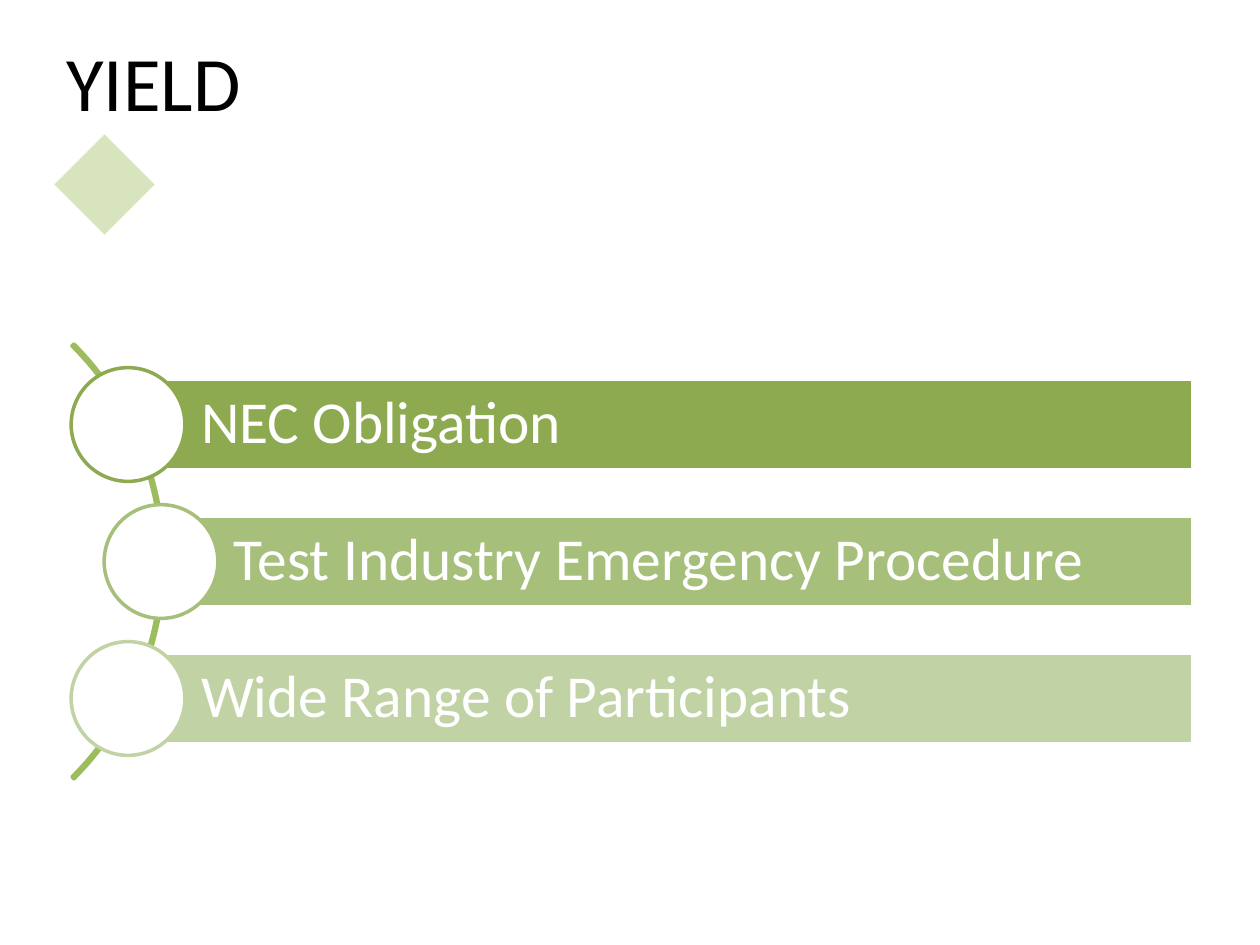
from pptx import Presentation
from pptx import util as u
from pptx.dml.color import RGBColor
from pptx.enum import shapes, text

PX = u.Inches(1) / 126
FONT = "Calibri"


def px(length):
    return u.Emu(round(length * PX))


def color(hex_code):
    return RGBColor.from_string(hex_code)


def add_figure(slide, preset, box, fill=None, line=None):
    figure = slide.shapes.add_shape(preset, *map(px, box))
    figure.shadow.inherit = False
    if fill:
        figure.fill.solid()
        figure.fill.fore_color.rgb = color(fill)
    else:
        figure.fill.background()
    if line:
        figure.line.color.rgb = color(line)
        figure.line.width = u.Pt(2)
    else:
        figure.line.fill.background()
    return figure


def write(frame, wording, size, ink):
    frame.word_wrap = True
    frame.vertical_anchor = text.MSO_ANCHOR.MIDDLE
    paragraph = frame.paragraphs[0]
    paragraph.text = wording
    paragraph.alignment = text.PP_ALIGN.LEFT
    paragraph.font.name = FONT
    paragraph.font.size = u.Pt(size)
    paragraph.font.color.rgb = color(ink)
    return paragraph


def add_heading(slide, box, wording):
    left, top, width, height = box
    diamond = add_figure(slide, shapes.MSO_SHAPE.RECTANGLE,
                         (left + 15, top + height - 6, 71, 71), "D7E4BD")
    diamond.rotation = 45
    title = slide.shapes.add_textbox(*map(px, box))
    write(title.text_frame, wording, 44, "000000")


def add_topic(slide, box, wording, tint):
    left, top, width, height = box
    bar = add_figure(slide, shapes.MSO_SHAPE.RECTANGLE, box, tint, "FFFFFF")
    bar.text_frame.margin_left = px(73)
    bar.text_frame.margin_right = px(11)
    write(bar.text_frame, wording, 34, "FFFFFF").line_spacing = 0.9
    diameter = height * 5 / 4
    add_figure(slide, shapes.MSO_SHAPE.OVAL,
               (left - diameter / 2, top + (height - diameter) / 2, diameter, diameter),
               "FFFFFF", tint)


def add_topic_list(slide, box, topics):
    left, top, width, height = box
    diameter = 615
    arc = add_figure(slide, shapes.MSO_SHAPE.BLOCK_ARC,
                     (left + 36 - diameter, top + (height - diameter) / 2, diameter, diameter),
                     line="9CBC5D")
    for index, angle in enumerate((189, 27, 0.0045)):
        arc.adjustments[index] = angle
    bar_height = 91
    pitch = (height - bar_height) / (len(topics) - 1)
    for row, (wording, tint, indent) in enumerate(topics):
        add_topic(slide, (left + indent, top + row * pitch, width - indent, bar_height),
                  wording, tint)


def main():
    deck = Presentation()
    deck.slide_width, deck.slide_height = px(1260), px(945)
    slide = deck.slides.add_slide(deck.slide_layouts[6])
    add_heading(slide, (54, 6, 1012, 149), "YIELD")
    add_topic_list(slide, (128, 379, 1065, 365), [
        ("NEC Obligation", "8DAA51", 0),
        ("Test Industry Emergency Procedure", "A6BF7A", 33),
        ("Wide Range of Participants", "C1D3A5", 0),
    ])
    deck.save("out.pptx")


if __name__ == "__main__":
    main()
